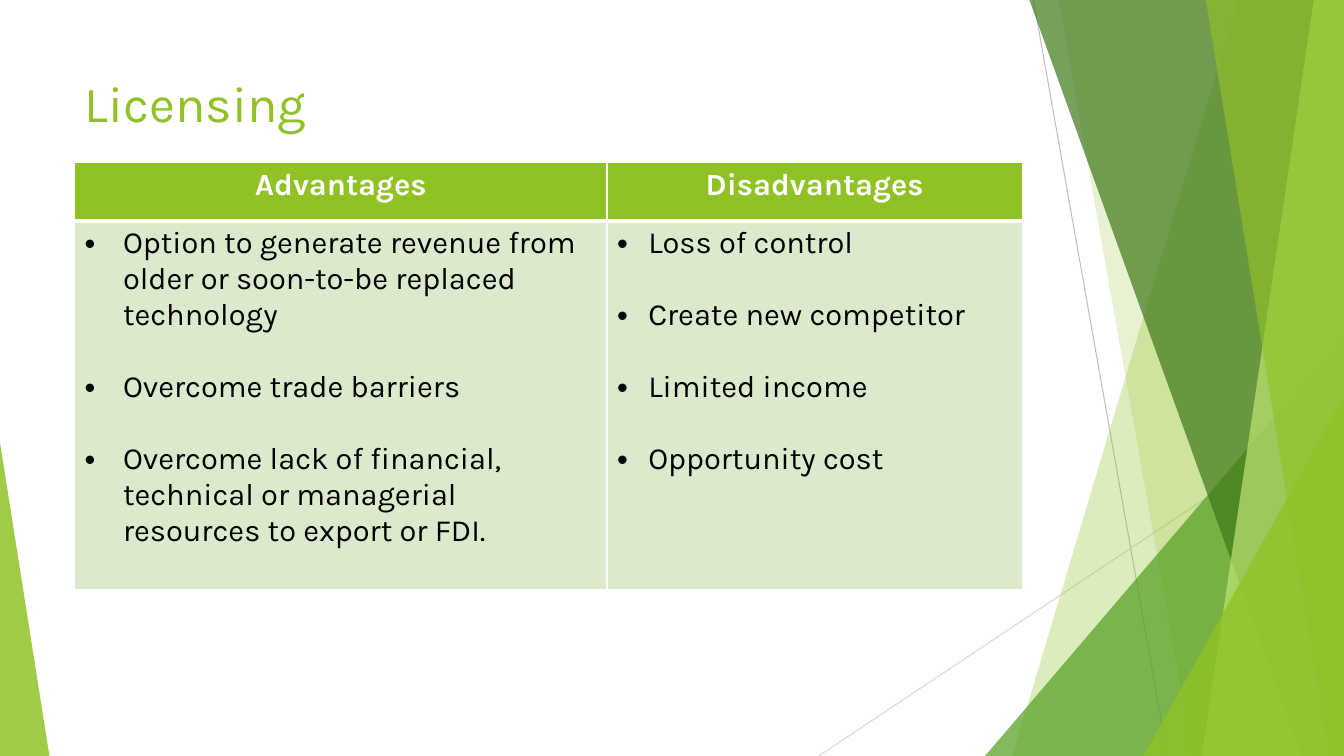
from lxml.etree import SubElement
from pptx import Presentation
from pptx.dml.color import RGBColor
from pptx.enum.shapes import MSO_CONNECTOR, MSO_SHAPE
from pptx.enum.text import MSO_ANCHOR, PP_ALIGN
from pptx.oxml.ns import qn
from pptx.util import Inches, Pt

LIME = RGBColor(0x90, 0xC2, 0x26)
PALE_LIME = RGBColor(0xC0, 0xE4, 0x74)
GREEN = RGBColor(0x54, 0xA0, 0x21)
DARK_GREEN = RGBColor(0x3F, 0x78, 0x19)
CELL_GREEN = RGBColor(0xDB, 0xE9, 0xCD)
GREY = RGBColor(0xBF, 0xBF, 0xBF)
LIGHT_GREY = RGBColor(0xD9, 0xD9, 0xD9)
WHITE = RGBColor(0xFF, 0xFF, 0xFF)
BLACK = RGBColor(0, 0, 0)

FONT = "Karla"
WIDTH, HEIGHT = 13.33, 7.5
LEFT, CONTENT_WIDTH = 0.74, 9.4
ROW_HEIGHTS = (0.58, 3.66)
LINE_GAP = 25.7

TITLE = "Licensing"
# heading, column width, bullet indent, points
COLUMNS = [
    ("Advantages", 5.28, 0.38, [
        "Option to generate revenue from older or soon-to-be replaced technology",
        "Overcome trade barriers",
        "Overcome lack of financial, technical or managerial resources to export or FDI.",
    ]),
    ("Disadvantages", 4.12, 0.31, [
        "Loss of control",
        "Create new competitor",
        "Limited income",
        "Opportunity cost",
    ]),
]

# start, end, colour
RULES = [
    ((10.25, 0), (11.58, HEIGHT), GREY),
    ((WIDTH, 4.03), (8.12, HEIGHT), LIGHT_GREY),
]
# Bands: top x, bottom x. Triangles: left, top, width, apex share. Then colour, opacity.
FACETS = [
    ("band", (12.28, 10.04), LIME, 30),
    ("band", (10.5, 11.83), LIME, 20),
    ("triangle", (9.77, 3.33, 3.56, 1), GREEN, 72),
    ("band", (10.21, 12.91), DARK_GREEN, 70),
    ("band", (13.03, 11.92), PALE_LIME, 70),
    ("band", (11.96, 13.18), LIME, 65),
    ("triangle", (11.34, 3.93, 1.99, 1), LIME, 80),
    ("triangle", (0, 4.39, 0.49, 0), LIME, 85),
]


def add_band(s, top_x, bottom_x):
    """Add a band that reaches from a slanted left side to the slide's right edge."""
    corners = [(top_x, 0), (WIDTH, 0), (WIDTH, HEIGHT), (bottom_x, HEIGHT)]
    points = [(Inches(x), Inches(y)) for x, y in corners]
    builder = s.shapes.build_freeform(*points[0])
    builder.add_line_segments(points[1:], close=True)
    return builder.convert_to_shape()


def add_triangle(s, left, top, width, apex):
    sp = s.shapes.add_shape(MSO_SHAPE.ISOSCELES_TRIANGLE, Inches(left), Inches(top),
                            Inches(width), Inches(HEIGHT - top))
    sp.adjustments[0] = apex
    return sp


def add_backdrop(s):
    for start, end, color in RULES:
        rule = s.shapes.add_connector(MSO_CONNECTOR.STRAIGHT,
                                      *(Inches(v) for v in start + end))
        rule.line.color.rgb = color
        rule.line.width = Pt(0.75)
        SubElement(rule._element.spPr, qn("a:effectLst"))
    makers = {"band": add_band, "triangle": add_triangle}
    for kind, geometry, color, opacity in FACETS:
        sp = makers[kind](s, *geometry)
        sp.shadow.inherit = False
        sp.line.fill.background()
        sp.fill.solid()
        sp.fill.fore_color.rgb = color
        clr = sp._element.spPr.find(qn("a:solidFill"))[0]
        SubElement(clr, qn("a:alpha"), val=str(opacity * 1000))


def style_text(p, size, color, bold=False):
    for r in p.runs:
        r.font.name = FONT
        r.font.size = Pt(size)
        r.font.bold = bold
        r.font.color.rgb = color


def add_bullet(p, indent):
    pPr = p._p.get_or_add_pPr()
    pPr.set("marL", str(Inches(indent)))
    pPr.set("indent", str(-Inches(indent)))
    SubElement(pPr, qn("a:buFont"), typeface="Arial")
    SubElement(pPr, qn("a:buChar"), char="•")


def format_cell(cell, fill, top, bottom):
    """Fill the cell and give it white borders, with top and bottom widths in points."""
    tcPr = cell._tc.get_or_add_tcPr()
    for side, width in (("L", 1), ("R", 1), ("T", top), ("B", bottom)):
        ln = SubElement(tcPr, qn(f"a:ln{side}"), w=str(Pt(width)))
        SubElement(SubElement(ln, qn("a:solidFill")), qn("a:srgbClr"), val=str(WHITE))
    cell.fill.solid()
    cell.fill.fore_color.rgb = fill


def add_title(s):
    title = s.shapes.title
    title.left, title.top = Inches(LEFT), Inches(0.67)
    title.width, title.height = Inches(CONTENT_WIDTH), Inches(1.44)
    tf = title.text_frame
    tf.text = TITLE
    tf.vertical_anchor = MSO_ANCHOR.TOP
    tf.paragraphs[0].alignment = PP_ALIGN.LEFT
    style_text(tf.paragraphs[0], 36, LIME)


def add_comparison(s):
    table = s.shapes.add_table(2, len(COLUMNS), Inches(LEFT), Inches(1.61),
                               Inches(CONTENT_WIDTH), Inches(sum(ROW_HEIGHTS))).table
    for row, height in zip(table.rows, ROW_HEIGHTS):
        row.height = Inches(height)
    for i, (heading, width, indent, points) in enumerate(COLUMNS):
        table.columns[i].width = Inches(width)
        head, body = table.cell(0, i), table.cell(1, i)
        format_cell(head, LIME, 1, 3)
        format_cell(body, CELL_GREEN, 3, 1)
        head.text = heading
        p = head.text_frame.paragraphs[0]
        p.alignment = PP_ALIGN.CENTER
        style_text(p, 22, WHITE, bold=True)
        body.text = "\n".join(points)
        for n, p in enumerate(body.text_frame.paragraphs):
            if n:
                p.space_before = Pt(LINE_GAP)
            add_bullet(p, indent)
            style_text(p, 22, BLACK)


def main():
    prs = Presentation()
    prs.slide_width, prs.slide_height = Inches(WIDTH), Inches(HEIGHT)
    s = prs.slides.add_slide(prs.slide_layouts[5])
    add_backdrop(s)
    add_title(s)
    add_comparison(s)
    prs.save("out.pptx")


if __name__ == "__main__":
    main()
